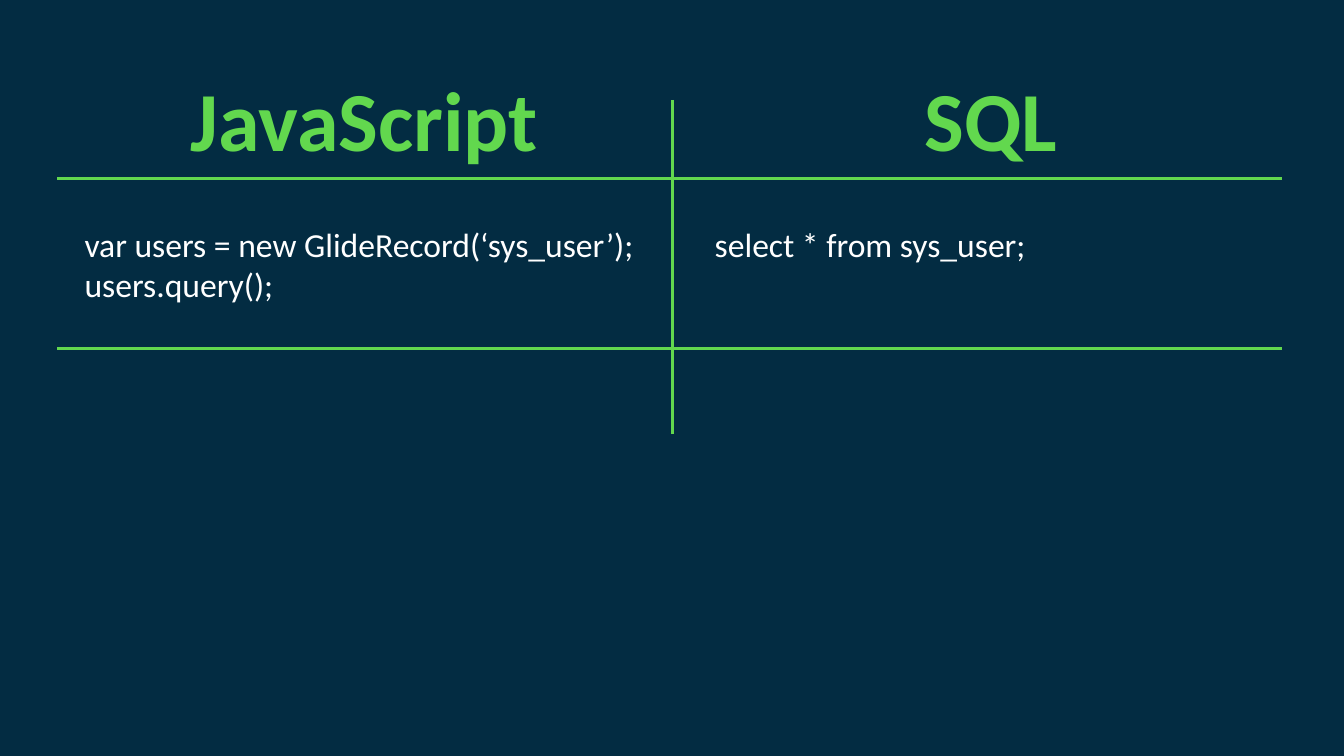
"""Build a slide comparing a JavaScript query with its SQL equivalent."""
import pptx
import pptx.dml.color
import pptx.enum.shapes
import pptx.enum.text
import pptx.oxml
import pptx.oxml.ns
import pptx.util

Inches = pptx.util.Inches
COLORS = {"background": "032C42", "accent": "62D84E", "code": "FFFFFF"}
HEADING = {"name": "Calibri", "size": pptx.util.Pt(60), "bold": True}
CODE = {"name": "Calibri", "size": pptx.util.Pt(24), "bold": False}


def rgb(key):
    return pptx.dml.color.RGBColor.from_string(COLORS[key])


def add_rule(s, x1, y1, x2, y2):
    line = s.shapes.add_connector(
        pptx.enum.shapes.MSO_CONNECTOR.STRAIGHT,
        Inches(x1), Inches(y1), Inches(x2), Inches(y2))
    line.line.color.rgb = rgb("accent")
    line.line.width = pptx.util.Pt(2)
    line._element.spPr.append(
        pptx.oxml.parse_xml(f"<a:effectLst {pptx.oxml.ns.nsdecls('a')}/>"))


def add_text(s, box, lines, style, color):
    sp = s.shapes.add_textbox(*map(Inches, box))
    tf = sp.text_frame
    tf.word_wrap = True
    tf.auto_size = pptx.enum.text.MSO_AUTO_SIZE.SHAPE_TO_FIT_TEXT
    for i, text in enumerate(lines):
        p = tf.add_paragraph() if i else tf.paragraphs[0]
        r = p.add_run()
        r.text = text
        for name, value in style.items():
            setattr(r.font, name, value)
        r.font.color.rgb = rgb(color)


def main():
    prs = pptx.Presentation()
    prs.slide_width, prs.slide_height = Inches(13.33), Inches(7.5)
    s = prs.slides.add_slide(prs.slide_layouts[6])
    s.background.fill.solid()
    s.background.fill.fore_color.rgb = rgb("background")

    for y in (1.77, 3.46):
        add_rule(s, 0.57, y, 12.72, y)
    add_rule(s, 6.67, 0.99, 6.67, 4.31)

    columns = [
        ("JavaScript", (1.79, 0.62, 3.67, 1.11), (0.74, 2.17, 5.75, 0.91),
         ["var users = new GlideRecord(‘sys_user’);", "users.query();"]),
        ("SQL", (9.07, 0.62, 1.65, 1.11), (6.99, 2.17, 5.49, 0.5),
         ["select * from sys_user;"]),
    ]
    for language, heading_box, code_box, code in columns:
        add_text(s, heading_box, [language], HEADING, "accent")
        add_text(s, code_box, code, CODE, "code")

    prs.save("out.pptx")


if __name__ == "__main__":
    main()
